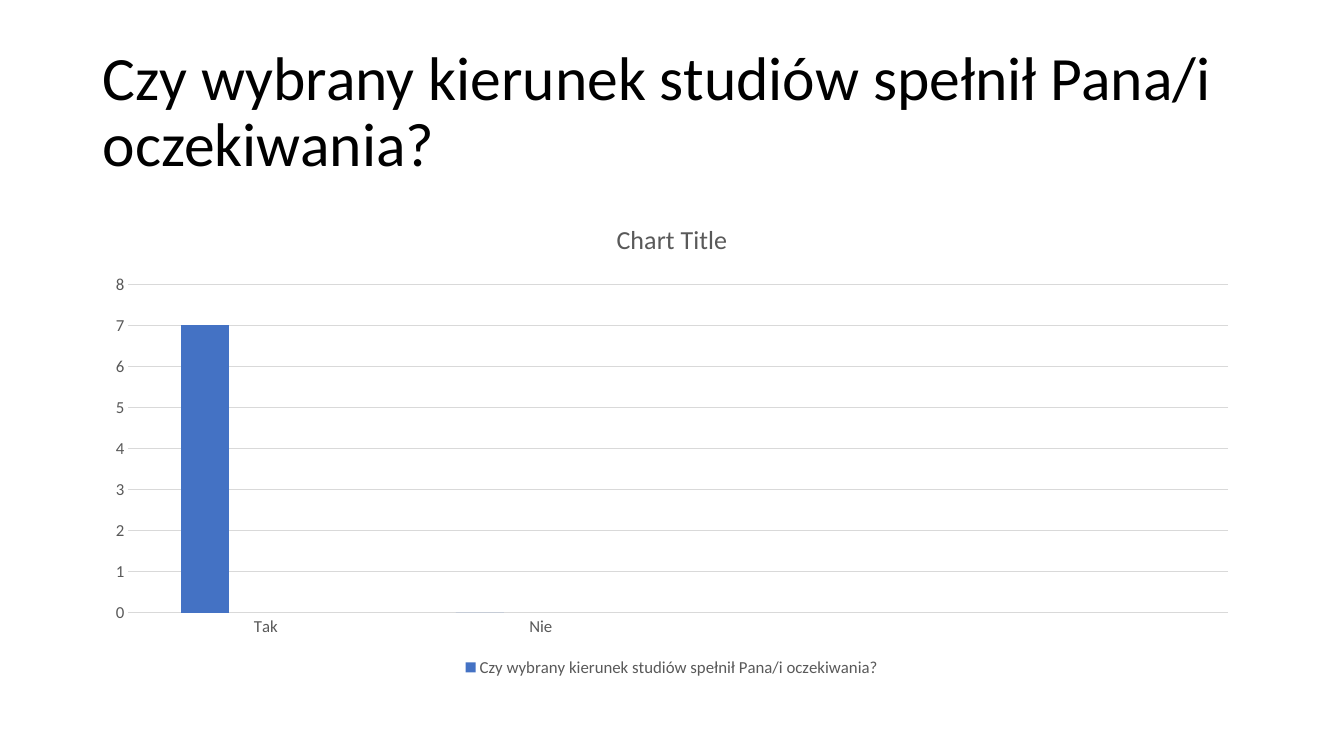
import pptx
import pptx.chart.data
import pptx.dml.color
import pptx.enum.chart
import pptx.enum.text
import pptx.oxml
import pptx.oxml.ns
import pptx.util
from dataclasses import dataclass

QUESTION = "Czy wybrany kierunek studiów spełnił Pana/i oczekiwania?"
CHART_TITLE = "Chart Title"
ANSWERS = ["Tak", "Nie", "", ""]
SERIES = [
    (QUESTION, [7, 0, None, None], "4472C4"),
    ("Series 2", [None] * 4, "ED7D31"),
    ("Series 3", [None] * 4, "A5A5A5"),
]
HIDDEN_LEGEND_ENTRIES = [1, 2]

PAGE_WIDTH, PAGE_HEIGHT = 13.33, 7.5
MARGIN = 0.92
CONTENT_WIDTH = PAGE_WIDTH - 2 * MARGIN
TITLE_BOX = (MARGIN, 0.4, CONTENT_WIDTH, 1.45)
CHART_BOX = (MARGIN, 2, CONTENT_WIDTH, 4.76)


@dataclass(frozen=True)
class Theme:
    font: str = "Calibri"
    title: str = "000000"
    label: str = "595959"
    rule: str = "D9D9D9"
    title_size: float = 44
    chart_title_size: float = 18.6
    label_size: float = 12
    rule_width: float = 0.75


THEME = Theme()


def rgb(code):
    return pptx.dml.color.RGBColor.from_string(code)


def inches(box):
    return [pptx.util.Inches(length) for length in box]


def style_font(font, size, color):
    font.name = THEME.font
    font.size = pptx.util.Pt(size)
    font.bold = False
    font.color.rgb = rgb(color)


def style_rule(line):
    line.color.rgb = rgb(THEME.rule)
    line.width = pptx.util.Pt(THEME.rule_width)


def add_title(page):
    title = page.shapes.title
    title.left, title.top, title.width, title.height = inches(TITLE_BOX)
    frame = title.text_frame
    frame.word_wrap = True
    frame.auto_size = pptx.enum.text.MSO_AUTO_SIZE.NONE
    frame.vertical_anchor = pptx.enum.text.MSO_ANCHOR.MIDDLE
    para = frame.paragraphs[0]
    para.alignment = pptx.enum.text.PP_ALIGN.LEFT
    para.line_spacing = 0.9
    span = para.add_run()
    span.text = QUESTION
    style_font(span.font, THEME.title_size, THEME.title)


def style_axes(chart):
    for axis in (chart.category_axis, chart.value_axis):
        axis.major_tick_mark = pptx.enum.chart.XL_TICK_MARK.NONE
        axis.minor_tick_mark = pptx.enum.chart.XL_TICK_MARK.NONE
        style_font(axis.tick_labels.font, THEME.label_size, THEME.label)
    style_rule(chart.category_axis.format.line)
    chart.value_axis.format.line.fill.background()
    chart.value_axis.has_major_gridlines = True
    style_rule(chart.value_axis.major_gridlines.format.line)


def add_legend(chart):
    chart.has_legend = True
    legend = chart.legend
    legend.position = pptx.enum.chart.XL_LEGEND_POSITION.BOTTOM
    legend.include_in_layout = False
    style_font(legend.font, THEME.label_size, THEME.label)
    position = legend._element.find(pptx.oxml.ns.qn("c:legendPos"))
    for index in reversed(HIDDEN_LEGEND_ENTRIES):
        position.addnext(pptx.oxml.parse_xml(
            f'<c:legendEntry {pptx.oxml.ns.nsdecls("c")}>'
            f'<c:idx val="{index}"/><c:delete val="1"/></c:legendEntry>'))


def add_answer_chart(page):
    data = pptx.chart.data.CategoryChartData()
    data.categories = ANSWERS
    for name, values, _ in SERIES:
        data.add_series(name, values)
    chart = page.shapes.add_chart(
        pptx.enum.chart.XL_CHART_TYPE.COLUMN_CLUSTERED, *inches(CHART_BOX), data).chart
    style_font(chart.font, THEME.label_size, THEME.label)

    chart.has_title = True
    span = chart.chart_title.text_frame.paragraphs[0].add_run()
    span.text = CHART_TITLE
    style_font(span.font, THEME.chart_title_size, THEME.label)
    chart.chart_title.include_in_layout = False

    plot = chart.plots[0]
    plot.gap_width = 219
    plot.overlap = -27
    plot.vary_by_categories = False
    for series, (_, _, color) in zip(plot.series, SERIES):
        series.format.fill.solid()
        series.format.fill.fore_color.rgb = rgb(color)
        series.invert_if_negative = False

    style_axes(chart)
    add_legend(chart)


def main():
    deck = pptx.Presentation()
    deck.slide_width, deck.slide_height = inches((PAGE_WIDTH, PAGE_HEIGHT))
    page = deck.slides.add_slide(deck.slide_layouts.get_by_name("Title Only"))
    add_title(page)
    add_answer_chart(page)
    deck.save("out.pptx")


if __name__ == "__main__":
    main()
